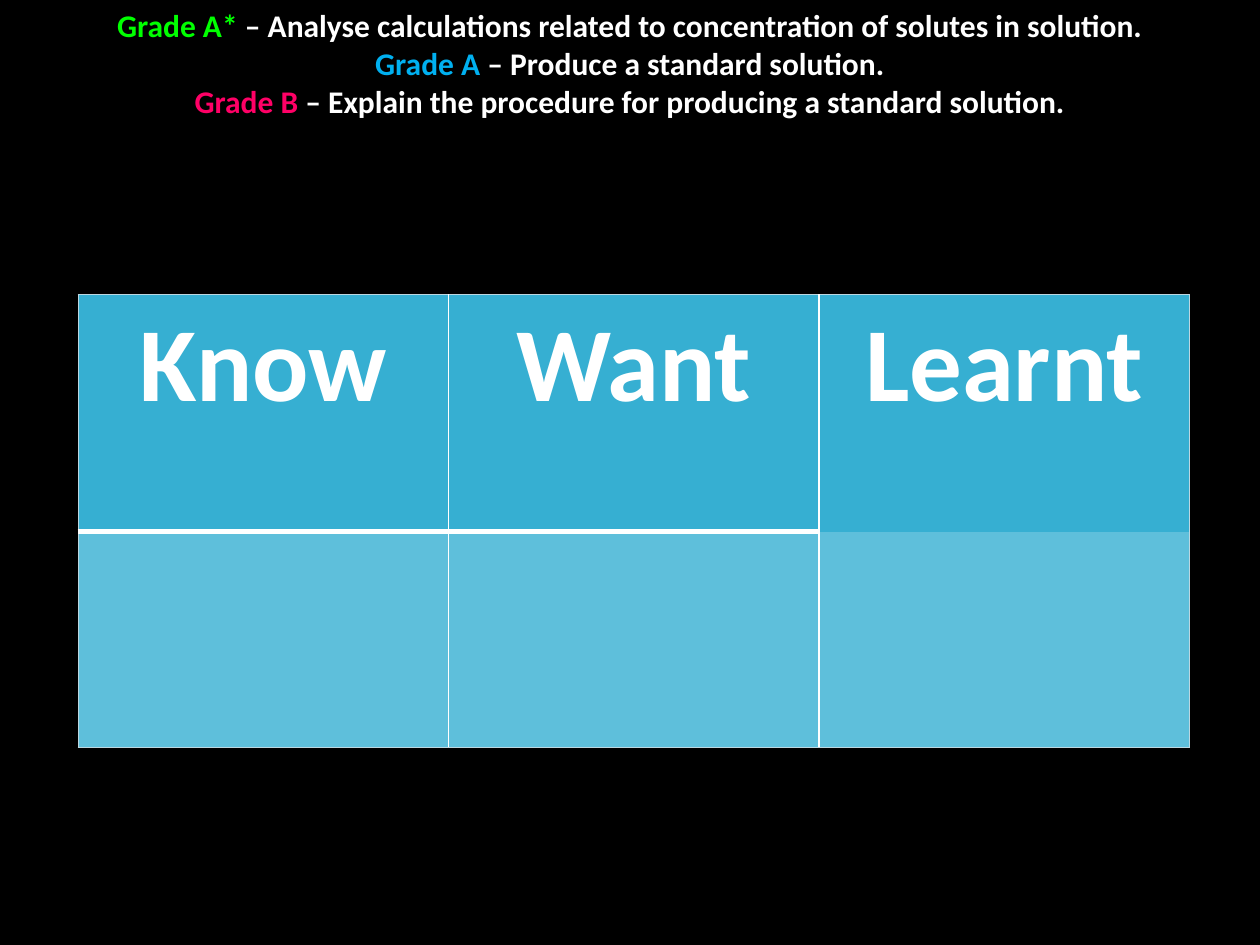
from lxml import etree
from pptx import Presentation
from pptx.dml.color import RGBColor
from pptx.enum.text import MSO_AUTO_SIZE, PP_ALIGN
from pptx.oxml.ns import qn
from pptx.util import Inches, Pt

CENTER = PP_ALIGN.CENTER
GROW = MSO_AUTO_SIZE.SHAPE_TO_FIT_TEXT
WIDTH, HEIGHT = 10, 7.5
FONT = "Calibri"
WHITE = "FFFFFF"
HEADER_FILL, BODY_FILL = "36AFD2", "5EBFDB"
OUTER = ("BCD7E1", 0.75)
INNER = (WHITE, 1)
RULE = (WHITE, 3)
GRADES = [
    ("Grade A* ", "00FF00", "– Analyse calculations related to concentration of solutes in solution."),
    ("Grade A ", "00B0F0", "– Produce a standard solution."),
    ("Grade B ", "FF0066", "– Explain the procedure for producing a standard solution."),
]
HEADINGS = ["Know", "Want", "Learnt"]
COLUMN_WIDTH = 2.94
ROW_HEIGHTS = [1.88, 1.71]


def color(value):
    return RGBColor.from_string(value)


def style_paragraph(paragraph, size):
    paragraph.alignment = CENTER
    paragraph.font.name = FONT
    paragraph.font.size = Pt(size)
    paragraph.font.bold = True


def add_span(paragraph, text, value):
    span = paragraph.add_run()
    span.text = text
    span.font.color.rgb = color(value)


def add_grades(page):
    box = page.shapes.add_textbox(0, 0, Inches(WIDTH), Inches(1.01))
    frame = box.text_frame
    frame.word_wrap = True
    frame.auto_size = GROW
    for index, (grade, value, aim) in enumerate(GRADES):
        paragraph = frame.add_paragraph() if index else frame.paragraphs[0]
        style_paragraph(paragraph, 18)
        add_span(paragraph, grade, value)
        add_span(paragraph, aim, WHITE)


def set_border(cell, side, line):
    properties = cell._tc.get_or_add_tcPr()
    border = etree.SubElement(properties, qn(f"a:ln{side}"))
    if line is None:
        border.set("w", "0")
        etree.SubElement(border, qn("a:noFill"))
        return
    value, width = line
    border.set("w", str(Pt(width)))
    fill = etree.SubElement(border, qn("a:solidFill"))
    etree.SubElement(fill, qn("a:srgbClr")).set("val", value)


def style_cell(cell, row, column):
    last = len(HEADINGS) - 1
    middle = RULE if column < last else None
    set_border(cell, "L", INNER if column else OUTER)
    set_border(cell, "R", INNER if column < last else OUTER)
    set_border(cell, "T", middle if row else OUTER)
    set_border(cell, "B", OUTER if row else middle)
    cell.fill.solid()
    cell.fill.fore_color.rgb = color(BODY_FILL if row else HEADER_FILL)


def add_chart_table(page):
    count = len(HEADINGS)
    frame = page.shapes.add_table(
        len(ROW_HEIGHTS), count, Inches(0.62), Inches(2.34),
        Inches(COLUMN_WIDTH * count), Inches(sum(ROW_HEIGHTS)))
    table = frame.table
    for column in table.columns:
        column.width = Inches(COLUMN_WIDTH)
    for row, height in enumerate(ROW_HEIGHTS):
        table.rows[row].height = Inches(height)
        for column in range(count):
            style_cell(table.cell(row, column), row, column)
    for column, heading in enumerate(HEADINGS):
        paragraph = table.cell(0, column).text_frame.paragraphs[0]
        style_paragraph(paragraph, 60)
        add_span(paragraph, heading, WHITE)


def main():
    deck = Presentation()
    deck.slide_width, deck.slide_height = Inches(WIDTH), Inches(HEIGHT)
    page = deck.slides.add_slide(deck.slide_layouts[6])
    page.background.fill.solid()
    page.background.fill.fore_color.rgb = color("000000")
    add_grades(page)
    add_chart_table(page)
    deck.save("out.pptx")


if __name__ == "__main__":
    main()
